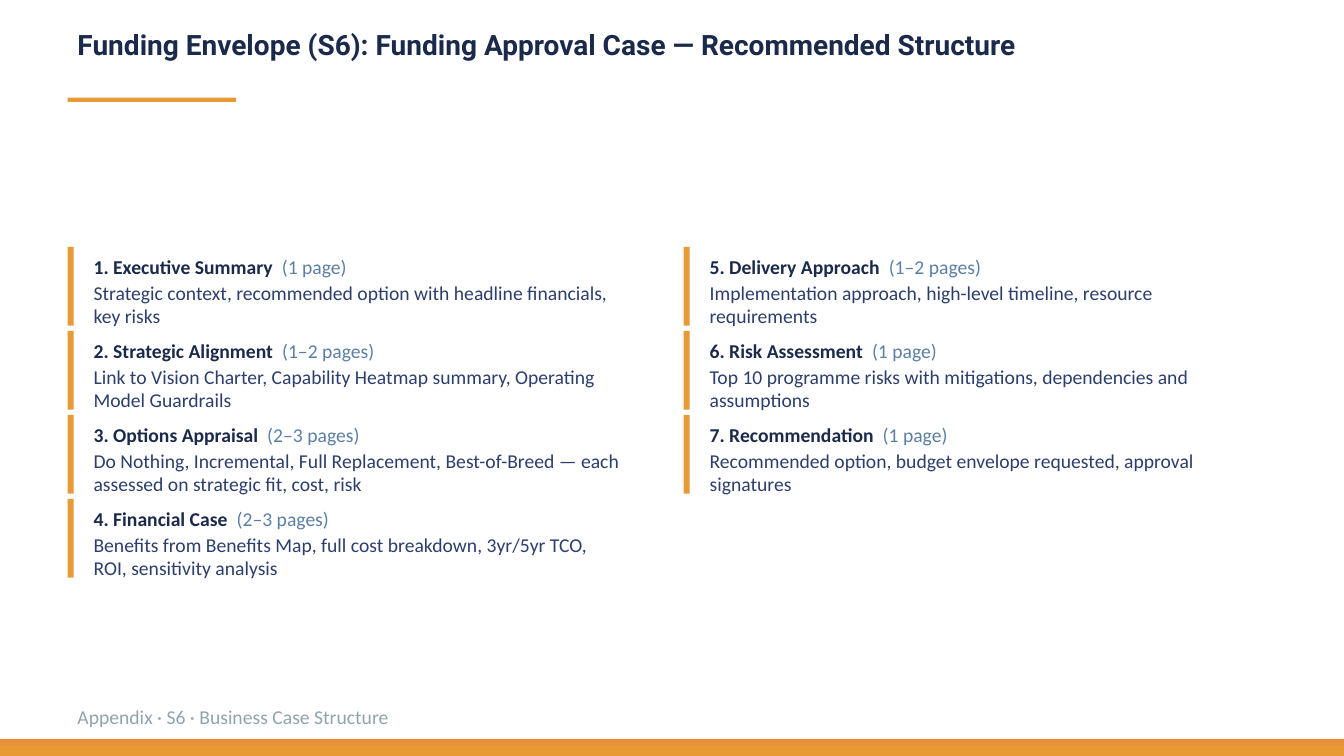
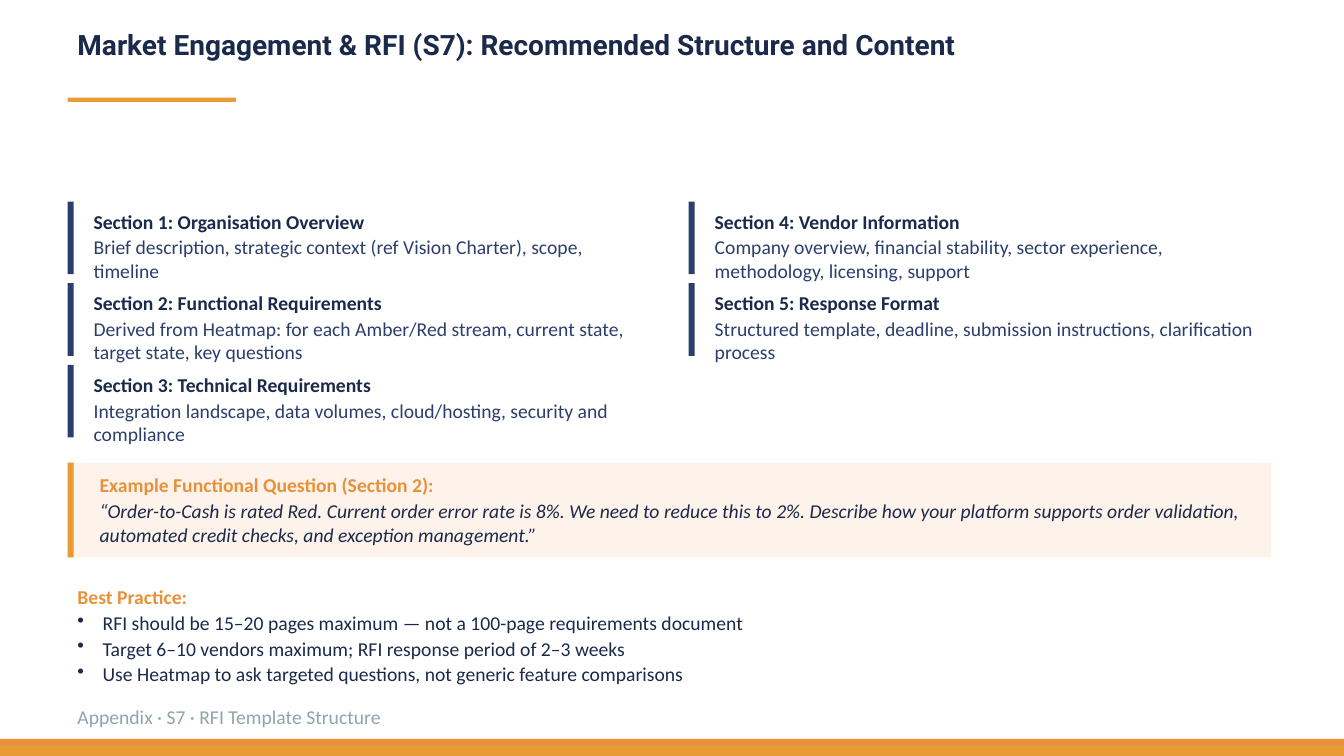
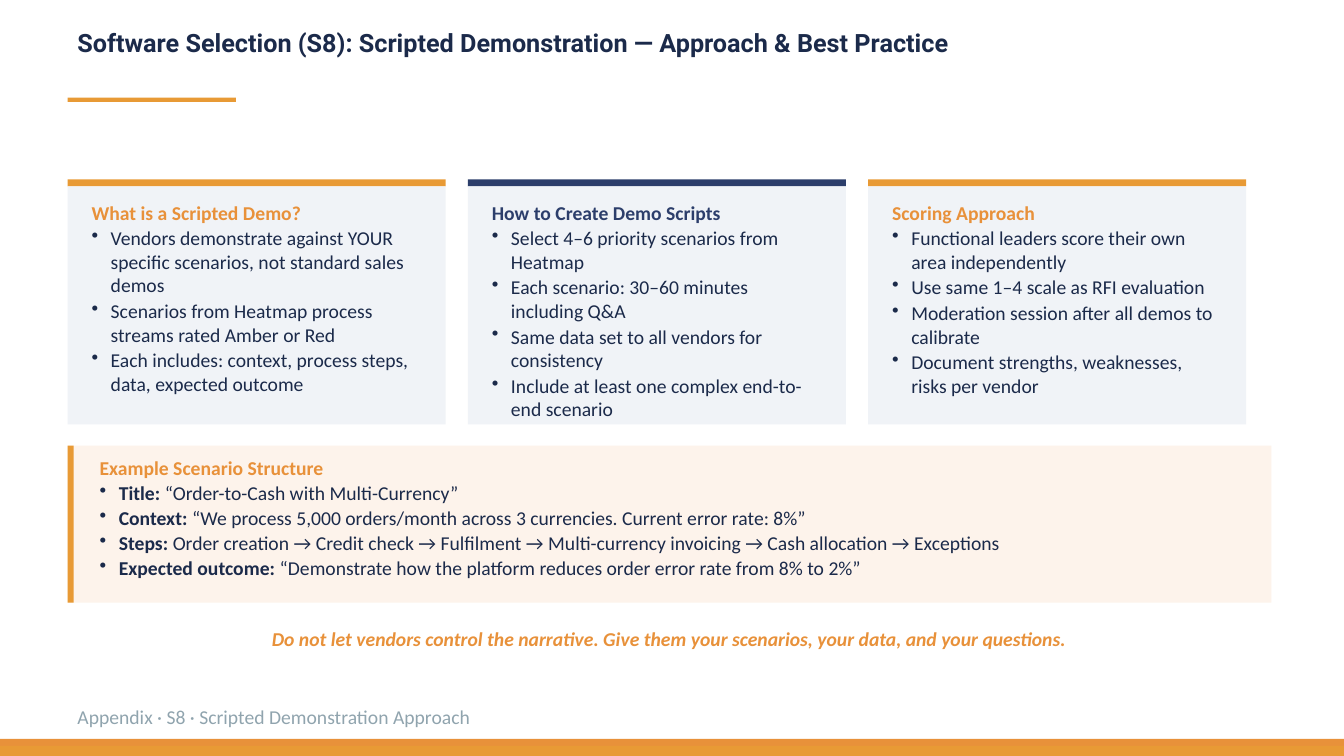
from dataclasses import dataclass

from lxml.etree import SubElement
from pptx import Presentation
from pptx.dml.color import RGBColor
from pptx.enum.shapes import MSO_SHAPE
from pptx.enum.text import PP_ALIGN
from pptx.oxml.ns import qn
from pptx.util import Inches, Pt

NAVY = RGBColor(0x1B, 0x2A, 0x4A)
INDIGO = RGBColor(0x2C, 0x3E, 0x6B)
STEEL = RGBColor(0x5B, 0x7F, 0xA5)
ORANGE = RGBColor(0xE8, 0x91, 0x3A)
AMBER = RGBColor(0xE8, 0x9A, 0x35)
CREAM = RGBColor(0xFD, 0xF3, 0xEB)
MIST = RGBColor(0xF0, 0xF3, 0xF7)
GREY = RGBColor(0x90, 0xA4, 0xAE)

TITLE_FONT, BODY_FONT, BODY_SIZE = "Roboto", "Calibri", 14
SLIDE_W, SLIDE_H = 13.33, 7.5
MARGIN, CONTENT_W = 0.67, 11.94
ACCENT_W = 0.06

CASE_TITLE = "Funding Envelope (S6): Funding Approval Case — Recommended Structure"
CASE_FOOTER = "Appendix · S6 · Business Case Structure"
CASE_SECTIONS = [
    [
        ("1. Executive Summary", "  (1 page)",
         "Strategic context, recommended option with headline financials, key risks"),
        ("2. Strategic Alignment", "  (1–2 pages)",
         "Link to Vision Charter, Capability Heatmap summary, Operating Model Guardrails"),
        ("3. Options Appraisal", "  (2–3 pages)",
         "Do Nothing, Incremental, Full Replacement, Best-of-Breed — each assessed on "
         "strategic fit, cost, risk"),
        ("4. Financial Case", "  (2–3 pages)",
         "Benefits from Benefits Map, full cost breakdown, 3yr/5yr TCO, ROI, "
         "sensitivity analysis"),
    ],
    [
        ("5. Delivery Approach", "  (1–2 pages)",
         "Implementation approach, high-level timeline, resource requirements"),
        ("6. Risk Assessment", "  (1 page)",
         "Top 10 programme risks with mitigations, dependencies and assumptions"),
        ("7. Recommendation", "  (1 page)",
         "Recommended option, budget envelope requested, approval signatures"),
    ],
]

RFI_TITLE = "Market Engagement & RFI (S7): Recommended Structure and Content"
RFI_FOOTER = "Appendix · S7 · RFI Template Structure"
RFI_SECTIONS = [
    [
        ("Section 1: Organisation Overview", "",
         "Brief description, strategic context (ref Vision Charter), scope, timeline"),
        ("Section 2: Functional Requirements", "",
         "Derived from Heatmap: for each Amber/Red stream, current state, target state, "
         "key questions"),
        ("Section 3: Technical Requirements", "",
         "Integration landscape, data volumes, cloud/hosting, security and compliance"),
    ],
    [
        ("Section 4: Vendor Information", "",
         "Company overview, financial stability, sector experience, methodology, "
         "licensing, support"),
        ("Section 5: Response Format", "",
         "Structured template, deadline, submission instructions, clarification process"),
    ],
]
QUESTION_HEADING = "Example Functional Question (Section 2):"
QUESTION = (
    "“Order-to-Cash is rated Red. Current order error rate is 8%. We need to reduce this "
    "to 2%. Describe how your platform supports order validation, automated credit checks, "
    "and exception management.”"
)
PRACTICE_HEADING = "Best Practice:"
PRACTICES = [
    "RFI should be 15–20 pages maximum — not a 100-page requirements document",
    "Target 6–10 vendors maximum; RFI response period of 2–3 weeks",
    "Use Heatmap to ask targeted questions, not generic feature comparisons",
]

DEMO_TITLE = "Software Selection (S8): Scripted Demonstration — Approach & Best Practice"
DEMO_FOOTER = "Appendix · S8 · Scripted Demonstration Approach"
DEMO_CARDS = [
    ("What is a Scripted Demo?", AMBER, ORANGE, [
        "Vendors demonstrate against YOUR specific scenarios, not standard sales demos",
        "Scenarios from Heatmap process streams rated Amber or Red",
        "Each includes: context, process steps, data, expected outcome",
    ]),
    ("How to Create Demo Scripts", INDIGO, INDIGO, [
        "Select 4–6 priority scenarios from Heatmap",
        "Each scenario: 30–60 minutes including Q&A",
        "Same data set to all vendors for consistency",
        "Include at least one complex end-to-end scenario",
    ]),
    ("Scoring Approach", AMBER, ORANGE, [
        "Functional leaders score their own area independently",
        "Use same 1–4 scale as RFI evaluation",
        "Moderation session after all demos to calibrate",
        "Document strengths, weaknesses, risks per vendor",
    ]),
]
SCENARIO_HEADING = "Example Scenario Structure"
SCENARIO = [
    ("Title: ", "“Order-to-Cash with Multi-Currency”"),
    ("Context: ",
     "“We process 5,000 orders/month across 3 currencies. Current error rate: 8%”"),
    ("Steps: ",
     "Order creation → Credit check → Fulfilment → Multi-currency invoicing → "
     "Cash allocation → Exceptions"),
    ("Expected outcome: ",
     "“Demonstrate how the platform reduces order error rate from 8% to 2%”"),
]
DEMO_ADVICE = (
    "Do not let vendors control the narrative. Give them your scenarios, your data, "
    "and your questions."
)


@dataclass
class Run:
    text: str
    color: RGBColor = NAVY
    bold: bool = False
    italic: bool = False


@dataclass
class Para:
    runs: list
    before: float = 0
    hanging: float = 0


def add_rect(slide, left, top, width, height, color):
    rect = slide.shapes.add_shape(
        MSO_SHAPE.RECTANGLE, Inches(left), Inches(top), Inches(width), Inches(height))
    rect.shadow.inherit = False
    rect.fill.solid()
    rect.fill.fore_color.rgb = color
    rect.line.fill.background()


def set_bullet(paragraph, hanging):
    props = paragraph._p.get_or_add_pPr()
    props.set("marL", str(Inches(hanging)))
    props.set("indent", str(-Inches(hanging)))
    SubElement(props, qn("a:buChar")).set("char", "•")


def add_text(slide, left, top, width, height, paras, *,
             font=BODY_FONT, size=BODY_SIZE, align=PP_ALIGN.LEFT):
    frame = slide.shapes.add_textbox(
        Inches(left), Inches(top), Inches(width), Inches(height)).text_frame
    frame.word_wrap = True
    for index, para in enumerate(paras):
        paragraph = frame.add_paragraph() if index else frame.paragraphs[0]
        if para.hanging:
            set_bullet(paragraph, para.hanging)
        paragraph.alignment = align
        if para.before:
            paragraph.space_before = Pt(para.before)
        for part in para.runs:
            run = paragraph.add_run()
            run.text = part.text
            run.font.name = font
            run.font.size = Pt(size)
            run.font.bold = part.bold
            run.font.italic = part.italic
            run.font.color.rgb = part.color


def heading(text, color=ORANGE):
    return Para([Run(text, color, bold=True)])


def add_base_slide(prs, title, footer, title_size=20, footer_w=CONTENT_W):
    """Add a slide with the title, its rule, the footer and the bottom bands."""
    slide = prs.slides.add_slide(prs.slide_layouts[6])
    add_rect(slide, 0, 7.33, SLIDE_W, 0.17, ORANGE)
    add_rect(slide, 0, 7.4, SLIDE_W, 0.1, AMBER)
    add_text(slide, MARGIN, 0.22, CONTENT_W, 0.58, [heading(title, NAVY)],
             font=TITLE_FONT, size=title_size)
    add_rect(slide, MARGIN, 0.97, 1.67, 0.04, AMBER)
    add_text(slide, MARGIN, 6.94, footer_w, 0.28, [Para([Run(footer, GREY)])])
    return slide


def add_sections(slide, columns, *, top, pitch, bar_h, column_step, text_w, color):
    """Lay out columns of barred entries: bold name, page count, description."""
    for col, sections in enumerate(columns):
        left = MARGIN + col * column_step
        for row, (name, pages, description) in enumerate(sections):
            y = top + row * pitch
            add_rect(slide, left, y, ACCENT_W, bar_h, color)
            title_runs = [Run(name, bold=True)]
            if pages:
                title_runs.append(Run(pages, STEEL))
            add_text(slide, left + 0.16, y + 0.03, text_w, bar_h - 0.06,
                     [Para(title_runs), Para([Run(description, INDIGO)], before=1.5)])


def add_callout(slide, top, height, paras):
    add_rect(slide, MARGIN, top, CONTENT_W, height, CREAM)
    add_rect(slide, MARGIN, top, ACCENT_W, height, AMBER)
    add_text(slide, 0.89, top + 0.05, 11.56, height - 0.11, paras)


def add_card(slide, left, title, band_color, title_color, points):
    top, width, band_h, pad = 1.78, 3.75, 0.07, 0.14
    add_rect(slide, left, top, width, band_h, band_color)
    add_rect(slide, left, top + band_h, width, 2.36, MIST)
    bullets = [Para([Run(point)], before=1.5, hanging=0.19) for point in points]
    add_text(slide, left + pad, 1.94, width - 2 * pad, 2.15,
             [heading(title, title_color), *bullets])


def build_case_slide(prs):
    slide = add_base_slide(prs, CASE_TITLE, CASE_FOOTER)
    add_sections(slide, CASE_SECTIONS, top=2.45, pitch=2.5 / 3, bar_h=0.78,
                 column_step=6.11, text_w=5.47, color=AMBER)


def build_rfi_slide(prs):
    slide = add_base_slide(prs, RFI_TITLE, RFI_FOOTER, footer_w=6.94)
    add_sections(slide, RFI_SECTIONS, top=2, pitch=0.81, bar_h=0.72,
                 column_step=6.16, text_w=5.61, color=INDIGO)
    add_callout(slide, 4.59, 0.94, [
        heading(QUESTION_HEADING), Para([Run(QUESTION, italic=True)], before=2)])
    bullets = [Para([Run(practice)], before=1.5 if index else 2, hanging=0.25)
               for index, practice in enumerate(PRACTICES)]
    add_text(slide, MARGIN, 5.75, CONTENT_W, 1.11, [heading(PRACTICE_HEADING), *bullets])


def build_demo_slide(prs):
    slide = add_base_slide(prs, DEMO_TITLE, DEMO_FOOTER, title_size=18, footer_w=6.94)
    for col, card in enumerate(DEMO_CARDS):
        add_card(slide, MARGIN + col * 3.97, *card)
    bullets = [Para([Run(label, bold=True), Run(text)],
                    before=1 if index else 1.5, hanging=0.19)
               for index, (label, text) in enumerate(SCENARIO)]
    add_callout(slide, 4.42, 1.56, [heading(SCENARIO_HEADING), *bullets])
    add_text(slide, MARGIN, 6.17, CONTENT_W, 0.56,
             [Para([Run(DEMO_ADVICE, ORANGE, bold=True, italic=True)])],
             align=PP_ALIGN.CENTER)


def main():
    prs = Presentation()
    prs.slide_width, prs.slide_height = Inches(SLIDE_W), Inches(SLIDE_H)
    build_case_slide(prs)
    build_rfi_slide(prs)
    build_demo_slide(prs)
    prs.save("out.pptx")


if __name__ == "__main__":
    main()
